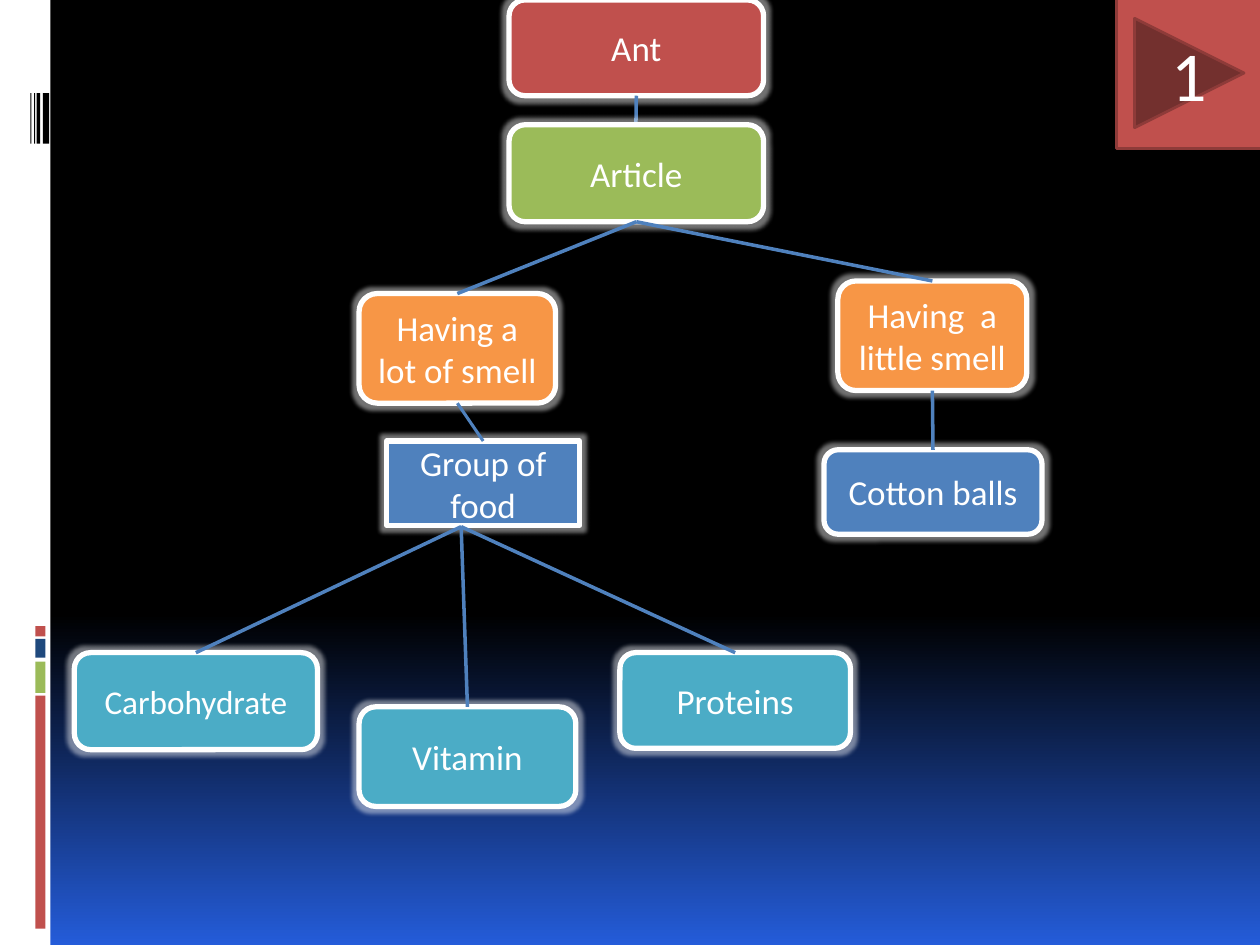
import pptx
import pptx.util
import pptx.dml.color
import pptx.enum.shapes
import pptx.enum.text
import pptx.oxml
import pptx.oxml.ns

Inches = pptx.util.Inches
RGBColor = pptx.dml.color.RGBColor
SHAPE = pptx.enum.shapes.MSO_SHAPE

BLACK = RGBColor(0x00, 0x00, 0x00)
WHITE = RGBColor(0xFF, 0xFF, 0xFF)
ROYAL = RGBColor(0x24, 0x5C, 0xD9)
NAVY = RGBColor(0x1F, 0x49, 0x7D)
RED = RGBColor(0xC0, 0x50, 0x4D)
DARK_RED = RGBColor(0x8E, 0x3B, 0x39)
GREEN = RGBColor(0x9B, 0xBB, 0x59)
ORANGE = RGBColor(0xF7, 0x96, 0x46)
BLUE = RGBColor(0x4F, 0x81, 0xBD)
TEAL = RGBColor(0x4B, 0xAC, 0xC6)

TOP, BOTTOM = 0, 2

# name: (text, box, fill, text size)
NODES = {
    "article": ("Article", (4.04, 0.99, 2.02, 0.77), GREEN, 20),
    "strong": ("Having a lot of smell", (2.85, 2.33, 1.56, 0.87), ORANGE, 20),
    "food": ("Group of food", (3.07, 3.5, 1.53, 0.67), BLUE, 20),
    "cotton": ("Cotton balls", (6.54, 3.57, 1.73, 0.67), BLUE, 20),
    "vitamin": ("Vitamin", (2.85, 5.61, 1.72, 0.79), TEAL, 20),
    "weak": ("Having  a little smell", (6.65, 2.23, 1.5, 0.87), ORANGE, 20),
    "carbohydrate": ("Carbohydrate", (0.59, 5.18, 1.93, 0.77), TEAL, 19),
    "proteins": ("Proteins", (4.92, 5.18, 1.83, 0.76), TEAL, 20),
}
LINKS = [("article", "strong", 2), ("article", "weak", 2),
         ("strong", "food", 1.75), ("weak", "cotton", 2)]
FOOD_GROUPS = ["carbohydrate", "vitamin", "proteins"]


def add_text(sp, text, size=20, color=WHITE, font="Calibri"):
    tf = sp.text_frame
    tf.word_wrap = True
    tf.vertical_anchor = pptx.enum.text.MSO_ANCHOR.MIDDLE
    p = tf.paragraphs[0]
    p.alignment = pptx.enum.text.PP_ALIGN.CENTER
    r = p.add_run()
    r.text = text
    r.font.size = pptx.util.Pt(size)
    r.font.name = font
    r.font.color.rgb = color


def add_block(s, kind, box, fill, line=None, width=3):
    sp = s.shapes.add_shape(kind, *map(Inches, box))
    sp.shadow.inherit = False
    sp.fill.solid()
    sp.fill.fore_color.rgb = fill
    if line is None:
        sp.line.fill.background()
    else:
        sp.line.color.rgb = line
        sp.line.width = pptx.util.Pt(width)
    return sp


def add_node(s, text, box, fill, size=20):
    """Rounded box with a white outline and a soft white glow."""
    sp = add_block(s, SHAPE.ROUNDED_RECTANGLE, box, fill, WHITE)
    effects = sp._element.spPr.find(pptx.oxml.ns.qn("a:effectLst"))
    effects.append(pptx.oxml.parse_xml(
        f'<a:glow {pptx.oxml.ns.nsdecls("a")} rad="63500">'
        '<a:srgbClr val="FFFFFF"><a:alpha val="45000"/></a:srgbClr></a:glow>'))
    add_text(sp, text, size=size)
    return sp


def add_link(s, start=(0, 0), end=(0, 0), parent=None, child=None, width=2):
    """Line from parent to child; a point stands in for a missing box."""
    c = s.shapes.add_connector(pptx.enum.shapes.MSO_CONNECTOR.STRAIGHT,
                               *map(Inches, (*start, *end)))
    if parent is not None:
        c.begin_connect(parent, BOTTOM)
    if child is not None:
        c.end_connect(child, TOP)
    c.line.color.rgb = BLUE
    c.line.width = pptx.util.Pt(width)
    c._element.spPr.append(pptx.oxml.parse_xml(
        f'<a:effectLst {pptx.oxml.ns.nsdecls("a")}/>'))


def set_background(s):
    fill = s.background.fill
    fill.gradient()
    fill.gradient_angle = 270
    for stop, position, color in zip(fill.gradient_stops, (0.65, 1), (BLACK, ROYAL)):
        stop.position = position
        stop.color.rgb = color


def add_side_band(s, left, top, width, height):
    add_block(s, SHAPE.RECTANGLE, (left, top, width, height), WHITE)
    for y, h, color in [(5.52, 1.85, RED), (5.25, 0.25, GREEN),
                        (5.07, 0.15, NAVY), (4.97, 0.08, RED)]:
        add_block(s, SHAPE.RECTANGLE, (left + 0.28, top + y, 0.08, h), color)
    for x, w in [(0.34, 0.05), (0.29, 0.03), (0.27, 0.01), (0.24, 0.01)]:
        add_block(s, SHAPE.RECTANGLE, (left + x, top + 0.74, w, 0.4), BLACK)


def add_tree(s, left, top):
    def shifted(x, y, *size):
        return (left + x, top + y, *size)

    ant = add_node(s, "Ant", shifted(4.04, 0, 2.02, 0.76), RED)
    add_link(s, parent=ant, end=shifted(5.04, 1.55))
    nodes = {name: add_node(s, text, shifted(*box), fill, size)
             for name, (text, box, fill, size) in NODES.items()}
    nodes["food"].adjustments[0] = 0
    for parent, child, width in LINKS:
        add_link(s, parent=nodes[parent], child=nodes[child], width=width)
    for name in FOOD_GROUPS:
        add_link(s, start=shifted(3.66, 4.18), child=nodes[name])


def add_next_button(s, *box):
    sp = add_block(s, SHAPE.ACTION_BUTTON_FORWARD_OR_NEXT, box, RED, DARK_RED, 1.5)
    add_text(sp, "1", size=40)


def main():
    prs = pptx.Presentation()
    prs.slide_width, prs.slide_height = Inches(10), Inches(7.5)
    s = prs.slides.add_slide(prs.slide_layouts[6])
    set_background(s)
    add_side_band(s, 0, 0, 0.4, 7.5)
    add_tree(s, 0, 0)
    add_next_button(s, 8.86, -0.02, 1.16, 1.2)
    prs.save("out.pptx")


if __name__ == "__main__":
    main()
